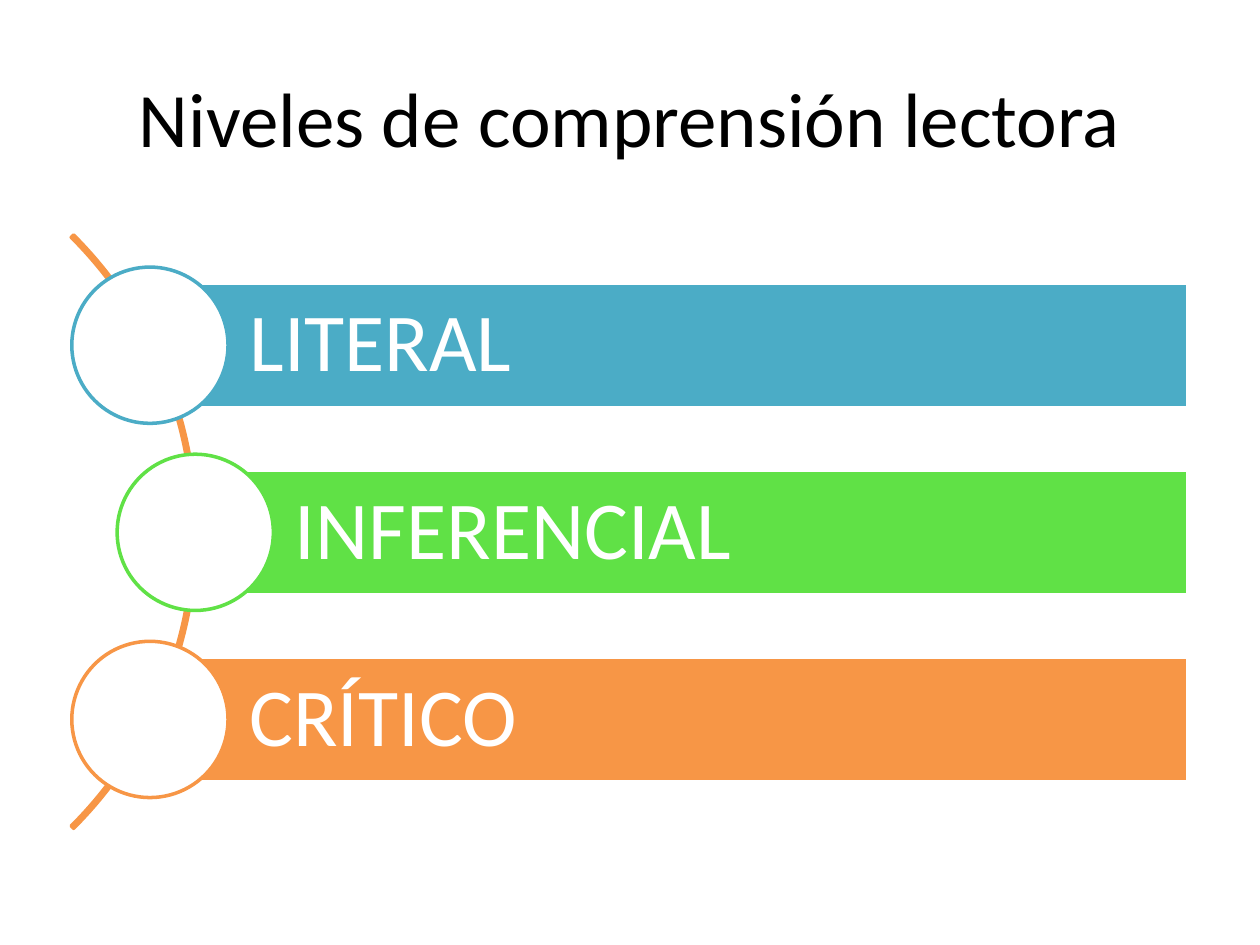
from pptx import Presentation
from pptx.dml.color import RGBColor
from pptx.enum.shapes import MSO_SHAPE
from pptx.enum.text import MSO_ANCHOR, PP_ALIGN
from pptx.util import Inches, Pt

BLACK = RGBColor(0x00, 0x00, 0x00)
WHITE = RGBColor(0xFF, 0xFF, 0xFF)
BLUE = RGBColor(0x4B, 0xAC, 0xC6)
GREEN = RGBColor(0x60, 0xE1, 0x46)
ORANGE = RGBColor(0xF7, 0x96, 0x46)

LEVELS = [("LITERAL", BLUE, 1.19), ("INFERENCIAL", GREEN, 1.55), ("CRÍTICO", ORANGE, 1.19)]
FIRST_CENTER, LEVEL_STEP = 2.74, 1.485
BAR_RIGHT, BAR_HEIGHT, CIRCLE_SIZE = 9.43, 0.99, 1.24


class LevelsSlide:
    font_name = "Calibri"
    line_width = Pt(2)
    title_frame = {"vertical_anchor": MSO_ANCHOR.MIDDLE, "word_wrap": True}
    bar_frame = {
        **title_frame,
        "margin_left": Inches(0.79),
        "margin_top": Inches(0.13),
        "margin_right": Inches(0.13),
        "margin_bottom": Inches(0.13),
    }
    title_paragraph = {"alignment": PP_ALIGN.CENTER}
    bar_paragraph = {"alignment": PP_ALIGN.LEFT, "line_spacing": 0.9}

    def __init__(self, deck):
        self.slide = deck.slides.add_slide(deck.slide_layouts[5])

    def apply(self, target, values):
        for name, value in values.items():
            setattr(target, name, value)

    def label(self, holder, text, size, color, frame, paragraph):
        self.apply(holder.text_frame, frame)
        line = holder.text_frame.paragraphs[0]
        self.apply(line, paragraph)
        run = line.add_run()
        run.text = text
        self.apply(run.font, {"name": self.font_name, "size": Pt(size)})
        run.font.color.rgb = color

    def title(self, text, left, top, width, height):
        heading = self.slide.shapes.title
        box = {"left": left, "top": top, "width": width, "height": height}
        self.apply(heading, {name: Inches(value) for name, value in box.items()})
        self.label(heading, text, 44, BLACK, self.title_frame, self.title_paragraph)

    def outline(self, kind, left, top, width, height, line, fill=None):
        figure = self.slide.shapes.add_shape(
            kind, Inches(left), Inches(top), Inches(width), Inches(height))
        figure.shadow.inherit = False
        if fill is None:
            figure.fill.background()
        else:
            figure.fill.solid()
            figure.fill.fore_color.rgb = fill
        figure.line.color.rgb = line
        figure.line.width = self.line_width
        return figure

    def arc(self, left, top, size, color):
        curve = self.outline(MSO_SHAPE.BLOCK_ARC, left, top, size, size, color)
        for index, value in enumerate((189, 27, 0.004)):
            curve.adjustments[index] = value

    def level(self, text, color, left, center):
        bar = self.outline(MSO_SHAPE.RECTANGLE, left, center - BAR_HEIGHT / 2,
                           BAR_RIGHT - left, BAR_HEIGHT, WHITE, color)
        self.label(bar, text, 47, WHITE, self.bar_frame, self.bar_paragraph)
        self.outline(MSO_SHAPE.OVAL, left - CIRCLE_SIZE / 2, center - CIRCLE_SIZE / 2,
                     CIRCLE_SIZE, CIRCLE_SIZE, color, WHITE)


def main():
    deck = Presentation()
    deck.slide_width, deck.slide_height = Inches(10), Inches(7.5)
    page = LevelsSlide(deck)
    page.title("Niveles de comprensión lectora", 0.5, 0.3, 9, 1.25)
    page.arc(-5.1, 0.89, 6.66, ORANGE)
    for index, (text, color, left) in enumerate(LEVELS):
        page.level(text, color, left, FIRST_CENTER + index * LEVEL_STEP)
    deck.save("out.pptx")


if __name__ == "__main__":
    main()
